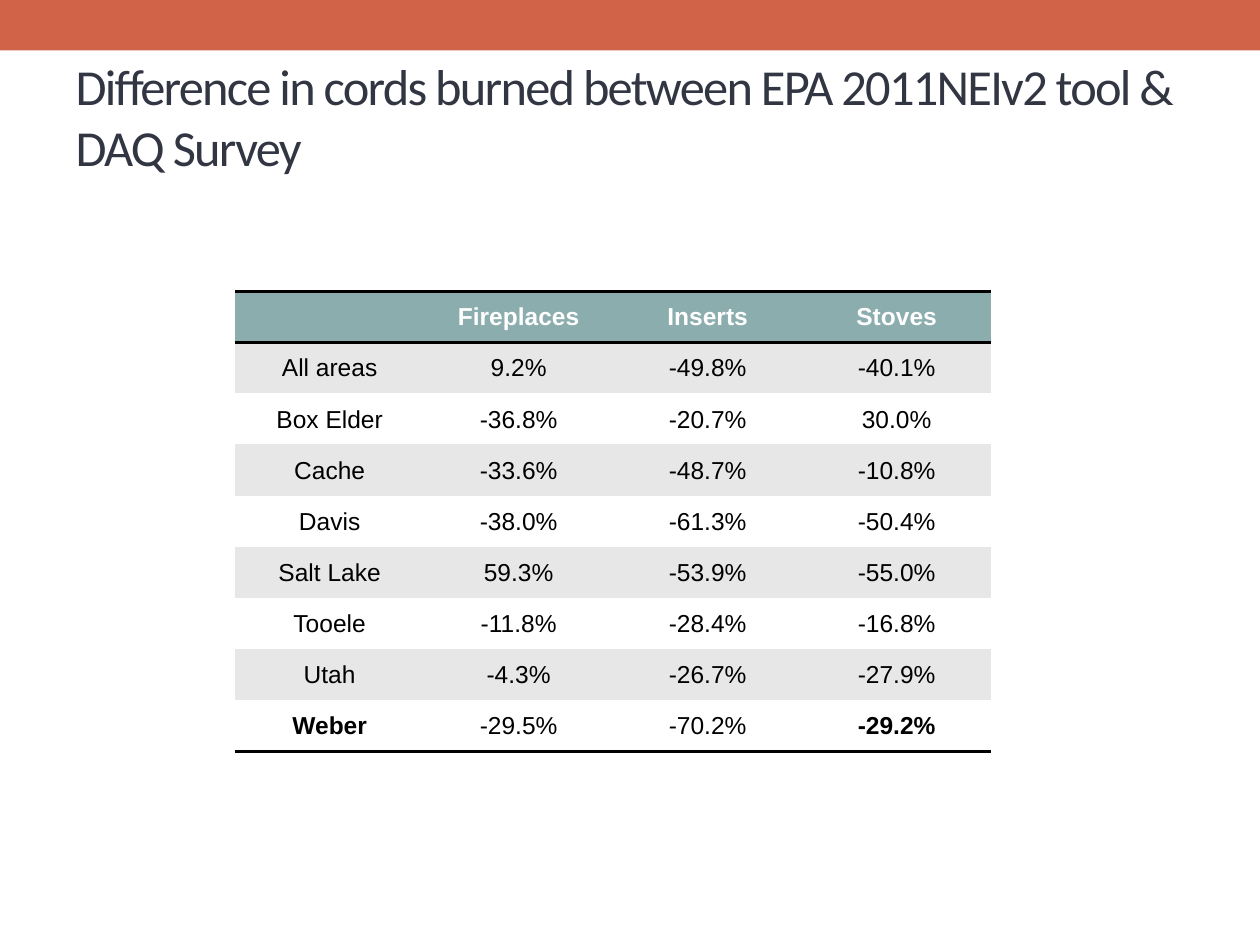
from dataclasses import dataclass

import pptx
import pptx.dml.color
import pptx.enum.shapes
import pptx.enum.text
import pptx.oxml
import pptx.oxml.ns
import pptx.util

Pt = pptx.util.Pt
ANCHOR = pptx.enum.text.MSO_ANCHOR
ALIGN = pptx.enum.text.PP_ALIGN
NO_STYLE = "{2D5ABB26-0587-4C30-8999-92F81FD0307C}"

HEADERS = ("", "Fireplaces", "Inserts", "Stoves")
AREAS = (
    ("All areas", "9.2%", "-49.8%", "-40.1%"),
    ("Box Elder", "-36.8%", "-20.7%", "30.0%"),
    ("Cache", "-33.6%", "-48.7%", "-10.8%"),
    ("Davis", "-38.0%", "-61.3%", "-50.4%"),
    ("Salt Lake", "59.3%", "-53.9%", "-55.0%"),
    ("Tooele", "-11.8%", "-28.4%", "-16.8%"),
    ("Utah", "-4.3%", "-26.7%", "-27.9%"),
    ("Weber", "-29.5%", "-70.2%", "-29.2%"),
)


@dataclass
class RowStyle:
    fill: str
    color: str = "000000"
    bold_columns: tuple[int, ...] = ()
    borders: tuple[str, ...] = ()
    tight: bool = True


def rgb(value: str) -> pptx.dml.color.RGBColor:
    return pptx.dml.color.RGBColor.from_string(value)


def add_run(p, text: str, font: str, size: float, color: str, bold: bool = False):
    r = p.add_run()
    r.text = text
    r.font.name = font
    r.font.size = Pt(size)
    r.font.bold = bold
    r.font.color.rgb = rgb(color)
    return r


def add_border(cell, side: str) -> None:
    """Draw a black 2 pt line; side is T (top) or B (bottom)."""
    line = pptx.oxml.parse_xml(
        f'<a:ln{side} {pptx.oxml.ns.nsdecls("a")} w="{Pt(2)}">'
        '<a:solidFill><a:srgbClr val="000000"/></a:solidFill>'
        f"</a:ln{side}>"
    )
    # Lines come before the fill in the cell properties
    cell.fill._xPr.find(pptx.oxml.ns.qn("a:solidFill")).addprevious(line)


def fill_row(table, index: int, texts: tuple[str, ...], style: RowStyle) -> None:
    for column, text in enumerate(texts):
        cell = table.cell(index, column)
        cell.fill.solid()
        cell.fill.fore_color.rgb = rgb(style.fill)
        cell.vertical_anchor = ANCHOR.MIDDLE
        if style.tight:
            cell.margin_left = cell.margin_right = cell.margin_top = Pt(0.72)
            cell.margin_bottom = Pt(0)
        for side in style.borders:
            add_border(cell, side)
        if text:
            p = cell.text_frame.paragraphs[0]
            p.alignment = ALIGN.CENTER
            add_run(p, text, "Arial", 14, style.color, column in style.bold_columns)


def row_style(number: int) -> RowStyle:
    """Style of a data row, counted from 0."""
    style = RowStyle("FFFFFF" if number % 2 else "E7E7E7")
    if number == len(AREAS) - 1:
        style.bold_columns = (0, 3)
        style.borders = ("B",)
    return style


def main() -> None:
    prs = pptx.Presentation()
    prs.slide_width, prs.slide_height = Pt(720), Pt(540)
    s = prs.slides.add_slide(prs.slide_layouts[5])

    # Top band
    sp = s.shapes.add_shape(
        pptx.enum.shapes.MSO_SHAPE.RECTANGLE, Pt(0), Pt(0), prs.slide_width, Pt(28.8)
    )
    sp.shadow.inherit = False
    sp.fill.solid()
    sp.fill.fore_color.rgb = rgb("D16349")
    sp.line.fill.background()

    # Title
    title = s.shapes.title
    title.left, title.top, title.width, title.height = Pt(36), Pt(41), Pt(648), Pt(50.4)
    tf = title.text_frame
    tf.auto_size = pptx.enum.text.MSO_AUTO_SIZE.NONE
    tf.word_wrap = True
    tf.vertical_anchor = ANCHOR.MIDDLE
    p = tf.paragraphs[0]
    p.alignment = ALIGN.LEFT
    r = add_run(
        p,
        "Difference in cords burned between EPA 2011NEIv2 tool & DAQ Survey",
        "Calibri", 28.8, "323643",
    )
    r.font._element.set("spc", "-100")

    # Table
    frame = s.shapes.add_table(
        len(AREAS) + 1, len(HEADERS), Pt(134.4), Pt(166.4), Pt(432), Pt(262.8)
    )
    table = frame.table
    table._tbl.tblPr.find(pptx.oxml.ns.qn("a:tableStyleId")).text = NO_STYLE
    header = RowStyle("8CADAE", "FFFFFF", (1, 2, 3), ("T", "B"), tight=False)
    fill_row(table, 0, HEADERS, header)
    for number, texts in enumerate(AREAS):
        fill_row(table, number + 1, texts, row_style(number))

    prs.save("out.pptx")


if __name__ == "__main__":
    main()
